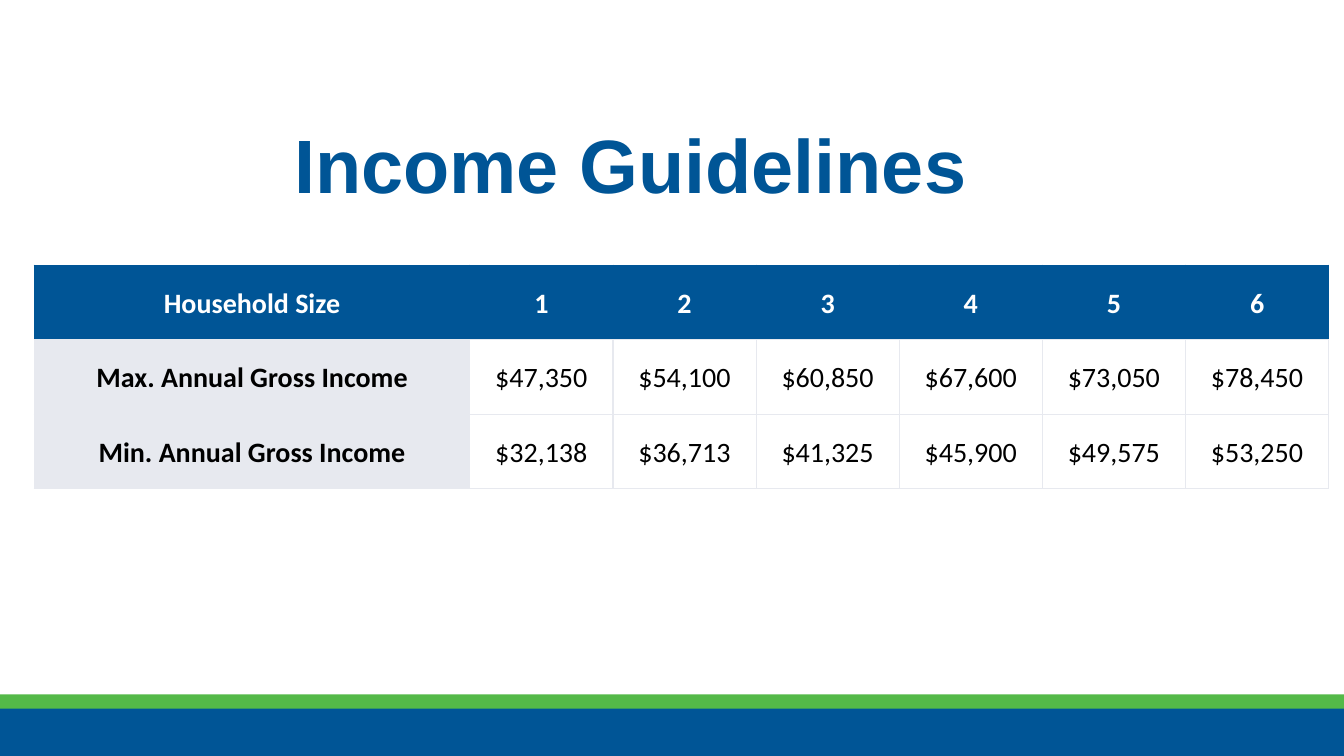
import pptx
import pptx.util
import pptx.dml.color
import pptx.enum.shapes
import pptx.enum.text
import pptx.oxml
import pptx.oxml.ns

Inches = pptx.util.Inches
COLORS = {"blue": "005596", "green": "54B948", "gray": "E7E9EF",
          "white": "FFFFFF", "black": "000000"}
INCOME_ROWS = [
    ["Household Size", "1", "2", "3", "4", "5", "6"],
    ["Max. Annual Gross Income", "$47,350", "$54,100", "$60,850", "$67,600", "$73,050", "$78,450"],
    ["Min. Annual Gross Income", "$32,138", "$36,713", "$41,325", "$45,900", "$49,575", "$53,250"],
]


def color(name):
    return pptx.dml.color.RGBColor.from_string(COLORS[name])


def write_text(frame, text, *, font, size, fill, bold=False, line_spacing=1.0):
    paragraph = frame.paragraphs[0]
    paragraph.alignment = pptx.enum.text.PP_ALIGN.CENTER
    paragraph.line_spacing = line_spacing
    run = paragraph.add_run()
    run.text = text
    run.font.name = font
    run.font.size = pptx.util.Pt(size)
    run.font.bold = bold
    run.font.color.rgb = color(fill)


class GuidelinesSlide:
    title_font = "Arial"
    table_font = "Calibri"
    middle = pptx.enum.text.MSO_ANCHOR.MIDDLE

    def __init__(self, presentation):
        self.slide = presentation.slides.add_slide(presentation.slide_layouts[6])

    def title(self, text, left, top, width, height):
        box = self.slide.shapes.add_textbox(Inches(left), Inches(top), Inches(width), Inches(height))
        box.text_frame.word_wrap = True
        box.text_frame.vertical_anchor = self.middle
        write_text(box.text_frame, text, font=self.title_font, size=54, fill="blue", bold=True)

    def bar(self, fill, top, height):
        shape = self.slide.shapes.add_shape(
            pptx.enum.shapes.MSO_SHAPE.RECTANGLE, 0, Inches(top), Inches(13.33), Inches(height))
        shape.shadow.inherit = False
        shape.fill.solid()
        shape.fill.fore_color.rgb = color(fill)
        shape.line.fill.background()

    def borders(self, cell, side_colors):
        properties = cell._tc.get_or_add_tcPr()
        for side, name in zip("LRTB", side_colors):
            properties.append(pptx.oxml.parse_xml(
                f'<a:ln{side} {pptx.oxml.ns.nsdecls("a")} w="12700"><a:solidFill>'
                f'<a:srgbClr val="{COLORS[name]}"/></a:solidFill></a:ln{side}>'))

    def cell(self, cell, text, is_header, is_label):
        cell.margin_left = cell.margin_right = Inches(0.07)
        cell.margin_top = cell.margin_bottom = 0
        cell.vertical_anchor = self.middle
        edge = "blue" if is_header else "gray"
        self.borders(cell, [edge, edge, edge, "gray"])
        cell.fill.solid()
        cell.fill.fore_color.rgb = color("blue" if is_header else "gray" if is_label else "white")
        write_text(cell.text_frame, text, font=self.table_font, size=20,
                   fill="white" if is_header else "black",
                   bold=is_header or is_label, line_spacing=1.07)

    def table(self, rows, left, top, label_width, value_width, row_height):
        column_count = len(rows[0])
        width = label_width + value_width * (column_count - 1)
        table = self.slide.shapes.add_table(
            len(rows), column_count, Inches(left), Inches(top),
            Inches(width), Inches(row_height * len(rows))).table
        for index, column in enumerate(table.columns):
            column.width = Inches(value_width if index else label_width)
        for row_index, texts in enumerate(rows):
            table.rows[row_index].height = Inches(row_height)
            for column_index, text in enumerate(texts):
                self.cell(table.cell(row_index, column_index), text,
                          row_index == 0, column_index == 0)


def main():
    presentation = pptx.Presentation()
    presentation.slide_width = Inches(13.33)
    presentation.slide_height = Inches(7.5)
    guidelines = GuidelinesSlide(presentation)
    guidelines.title("Income Guidelines", 2.06, 1.06, 8.39, 1.11)
    guidelines.table(INCOME_ROWS, 0.34, 2.63, 4.32, 1.42, 0.74)
    guidelines.bar("blue", 7.01, 0.57)
    guidelines.bar("green", 6.89, 0.14)
    presentation.save("out.pptx")


if __name__ == "__main__":
    main()
